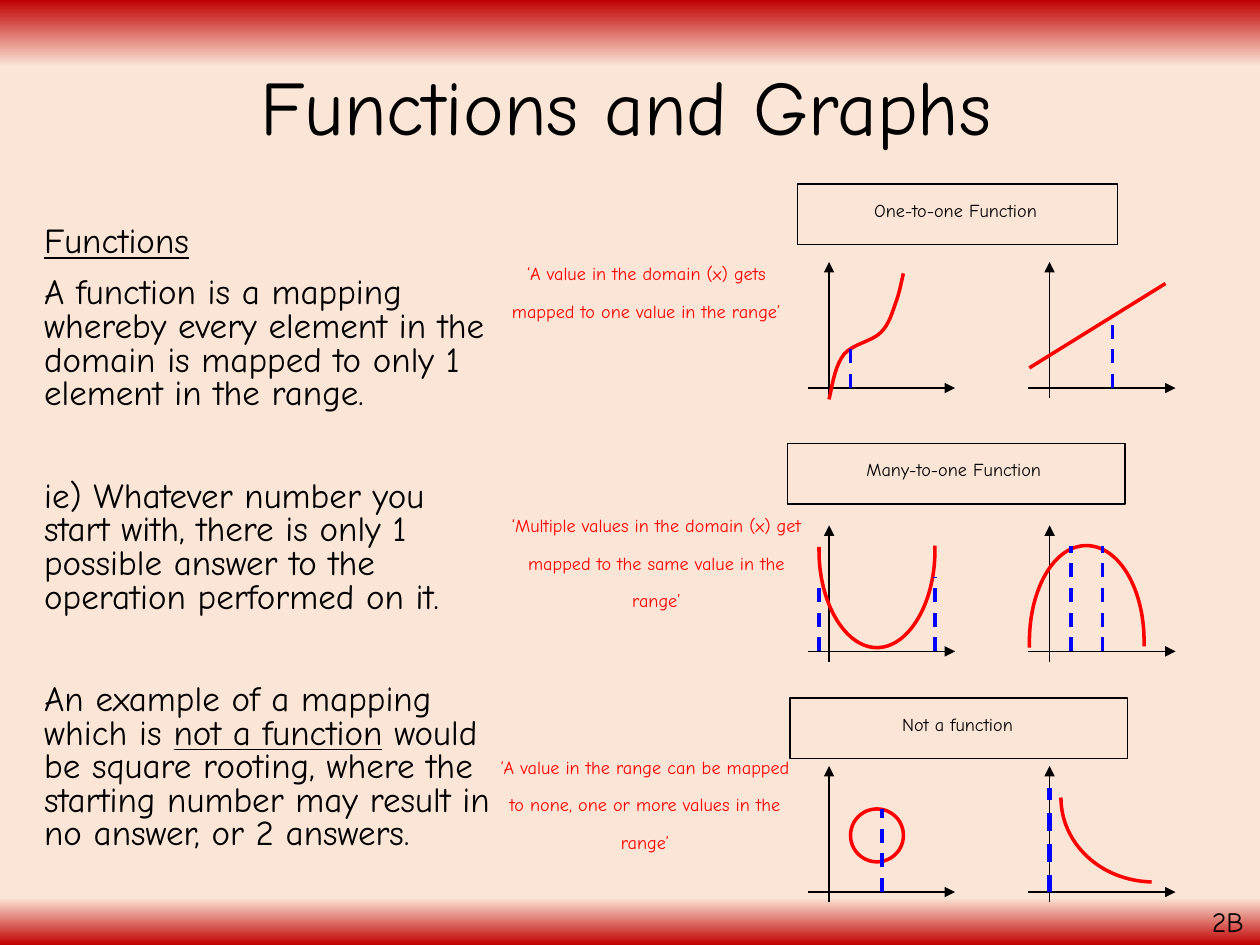
import copy
import dataclasses

import pptx
import pptx.dml.color
import pptx.enum.dml
import pptx.enum.shapes
import pptx.enum.text
import pptx.oxml.ns
import pptx.util
from lxml import etree

FONT = "Comic Neue"
HUES = {"ink": "000000", "red": "FF0000", "blue": "0000FF",
        "edge": "C00000", "page": "FBE5D6"}
ALIGN = pptx.enum.text.PP_ALIGN
ANCHOR = pptx.enum.text.MSO_ANCHOR
SHAPE = pptx.enum.shapes.MSO_SHAPE
Point = tuple[float, float]


@dataclasses.dataclass
class Note:
    text: str
    box: tuple
    hue: str = "ink"
    size: float = 18
    align: int = ALIGN.CENTER
    raised: bool = True


@dataclasses.dataclass
class Line:
    start: Point
    end: Point
    hue: str = "blue"
    width: float = 2
    dash: bool = True
    arrow: bool = False


def inch(size: float) -> int:
    return pptx.util.Cm(size * 2.54)


def rgb(hue: str):
    return pptx.dml.color.RGBColor.from_string(HUES[hue])


def apply(thing, form: dict) -> None:
    for name, value in form.items():
        setattr(thing, name, value)


def place(shape, box: tuple) -> None:
    apply(shape, dict(zip(("left", "top", "width", "height"), map(inch, box))))


def style(run, size: float, hue: str = "ink", **more) -> None:
    apply(run.font, {"name": FONT, "size": pptx.util.Pt(size), **more})
    run.font.color.rgb = rgb(hue)


def stroke(shape, hue: str, width: float) -> None:
    shape.line.color.rgb = rgb(hue)
    shape.line.width = pptx.util.Pt(width)


def hollow(shape, hue: str, width: float) -> None:
    shape.shadow.inherit = False
    shape.fill.background()
    stroke(shape, hue, width)


def paint(slide, stops: list) -> None:
    """Fill the background with a vertical gradient."""
    fill = slide.background.fill
    fill.gradient()
    fill.gradient_angle = 270
    group = slide.element.xpath(".//p:bg//a:gsLst")[0]
    while len(group) < len(stops):
        group.append(copy.deepcopy(group[0]))
    for stop, (spot, hue) in zip(fill.gradient_stops, stops):
        stop.position = spot
        stop.color.rgb = rgb(hue)


def write(slide, note: Note) -> None:
    box = slide.shapes.add_textbox(*map(inch, note.box))
    box.text_frame.word_wrap = True
    para = box.text_frame.paragraphs[0]
    para.alignment = note.align
    run = para.add_run()
    run.text = note.text
    style(run, note.size, note.hue)
    if note.raised:
        run._r.get_or_add_rPr().set("baseline", "30000")


def draw(slide, line: Line) -> None:
    link = slide.shapes.add_connector(
        pptx.enum.shapes.MSO_CONNECTOR.STRAIGHT,
        *map(inch, line.start + line.end))
    stroke(link, line.hue, line.width)
    if line.dash:
        link.line.dash_style = pptx.enum.dml.MSO_LINE.DASH
    qn = pptx.oxml.ns.qn
    if line.arrow:
        etree.SubElement(link.line._get_or_add_ln(), qn("a:tailEnd"), type="triangle")
    etree.SubElement(link.element.spPr, qn("a:effectLst"))


def axes(slide, x: float, y: float) -> None:
    for start, end in (((x, y + 0.08), (x, y - 1)),
                       ((x - 0.17, y), (x + 1, y))):
        draw(slide, Line(start, end, "ink", 0.75, False, True))


def curve(slide, knots: list[Point]) -> None:
    """Draw a chain of cubic curves: each three knots after the first make one."""
    first, *rest = [(inch(x), inch(y)) for x, y in knots]
    pen = slide.shapes.build_freeform(*first)
    pen.add_line_segments(rest, close=False)
    shape = pen.convert_to_shape()
    hollow(shape, "red", 2)
    trail = shape.element.xpath(".//a:path")[0]
    steps = shape.element.xpath(".//a:lnTo")
    for k in range(0, len(steps), 3):
        bend = etree.SubElement(trail, pptx.oxml.ns.qn("a:cubicBezTo"))
        for step in steps[k:k + 3]:
            bend.append(step[0])
            trail.remove(step)


def fill_title(title) -> None:
    place(title, (0.66, 0.15, 8.62, 1.45))
    title.text_frame.vertical_anchor = ANCHOR.MIDDLE
    para = title.text_frame.paragraphs[0]
    apply(para, {"alignment": ALIGN.CENTER, "line_spacing": 0.9})
    run = para.add_run()
    run.text = "Functions and Graphs"
    style(run, 44)


def fill_body(body) -> None:
    place(body, (0, 1.75, 4, 5.75))
    frame = body.text_frame
    frame.auto_size = pptx.enum.text.MSO_AUTO_SIZE.NONE
    for i, (gap, runs) in enumerate(BODY):
        para = frame.add_paragraph() if i else frame.paragraphs[0]
        apply(para, {"line_spacing": 0.8, "space_before": pptx.util.Pt(gap)})
        props = para._p.get_or_add_pPr()
        props.set("marL", str(inch(0.25)))
        props.set("indent", "0")
        etree.SubElement(props, pptx.oxml.ns.qn("a:buNone"))
        for text, under in runs:
            run = para.add_run()
            run.text = text
            style(run, 20, underline=under)


BODY = [
    (10, [("Functions", True)]),
    (10, [("A function is a mapping whereby every element in the domain "
           "is mapped to only 1 element in the range.", False)]),
    (39.3, [("ie) Whatever number you start with, there is only 1 possible "
             "answer to the operation performed on it.", False)]),
    (39.3, [("An example of a mapping which is ", False), ("not a function", True),
            (" would be square rooting, where the starting number may result in "
             "no answer, or 2 answers.", False)]),
]
NOTES = [
    Note("One-to-one Function", (5.42, 1.5, 4.33, 0.4)),
    Note("Many-to-one Function", (6.11, 3.56, 2.92, 0.4)),
    Note("Not a function", (6.14, 5.58, 2.92, 0.4)),
    Note("‘A value in the domain (x) gets mapped to one value in the range’",
         (3.92, 2, 2.42, 1.3), "red"),
    Note("‘Multiple values in the domain (x) get mapped to the same value "
         "in the range’", (3.92, 4, 2.58, 1.3), "red"),
    Note("‘A value in the range can be mapped to none, one or more values "
         "in the range’", (3.83, 5.92, 2.58, 1.3), "red"),
    Note("2B", (9.52, 7.13, 0.56, 0.37), size=16, align=ALIGN.LEFT, raised=False),
]
FRAMES = [(6.33, 1.46, 2.54, 0.48), (6.25, 3.52, 2.68, 0.48), (6.27, 5.54, 2.68, 0.48)]
COLS = (6.58, 8.33)
ROWS = (3.08, 5.17, 7.08)
CURVES = [
    [(6.58, 3.17), (6.61, 3.03), (6.63, 2.9), (6.7, 2.81), (6.77, 2.73),
     (6.92, 2.71), (6.99, 2.64), (7.06, 2.57), (7.08, 2.48), (7.11, 2.4),
     (7.14, 2.32), (7.15, 2.25), (7.17, 2.17)],
    [(7.42, 4.33), (7.42, 4.35), (7.42, 4.36), (7.42, 4.37), (7.42, 4.79),
     (7.21, 5.14), (6.96, 5.14), (6.71, 5.14), (6.5, 4.79), (6.5, 4.37),
     (6.5, 4.36), (6.5, 4.35), (6.5, 4.34)],
    [(8.17, 5.14), (8.17, 5.12), (8.17, 5.11), (8.17, 5.09), (8.17, 4.67),
     (8.37, 4.33), (8.62, 4.33), (8.88, 4.33), (9.08, 4.67), (9.08, 5.09),
     (9.08, 5.11), (9.08, 5.12), (9.08, 5.13)],
    [(9.14, 7), (8.73, 6.99), (8.42, 6.69), (8.42, 6.33)],
]
# Row of the plot, x, and top of each dashed line
DROPS = [(0, 6.75, 2.75), (0, 8.83, 2.5), (1, 6.5, 4.67), (1, 7.42, 4.58),
         (1, 8.5, 4.33), (1, 8.75, 4.33), (2, 7, 6.42), (2, 8.33, 6.25)]


def main() -> None:
    deck = pptx.Presentation()
    apply(deck, {"slide_width": inch(10), "slide_height": inch(7.5)})
    slide = deck.slides.add_slide(deck.slide_layouts[1])
    paint(slide, [(0, "edge"), (0.07, "page"), (0.95, "page"), (1, "edge")])
    fill_title(slide.shapes.title)
    fill_body(slide.placeholders[1])
    for box in FRAMES:
        hollow(slide.shapes.add_shape(SHAPE.RECTANGLE, *map(inch, box)), "ink", 0.75)
    for y in ROWS:
        for x in COLS:
            axes(slide, x, y)
    draw(slide, Line((8.17, 2.92), (9.25, 2.25), "red", dash=False))
    ring = slide.shapes.add_shape(SHAPE.OVAL, *map(inch, (6.75, 6.42, 0.42, 0.42)))
    hollow(ring, "red", 2)
    for knots in CURVES:
        curve(slide, knots)
    for row, x, top in DROPS:
        width = 2.5 if x == COLS[1] else 2
        draw(slide, Line((x, ROWS[row]), (x, top), width=width))
    for note in NOTES:
        write(slide, note)
    deck.save("out.pptx")


if __name__ == "__main__":
    main()
